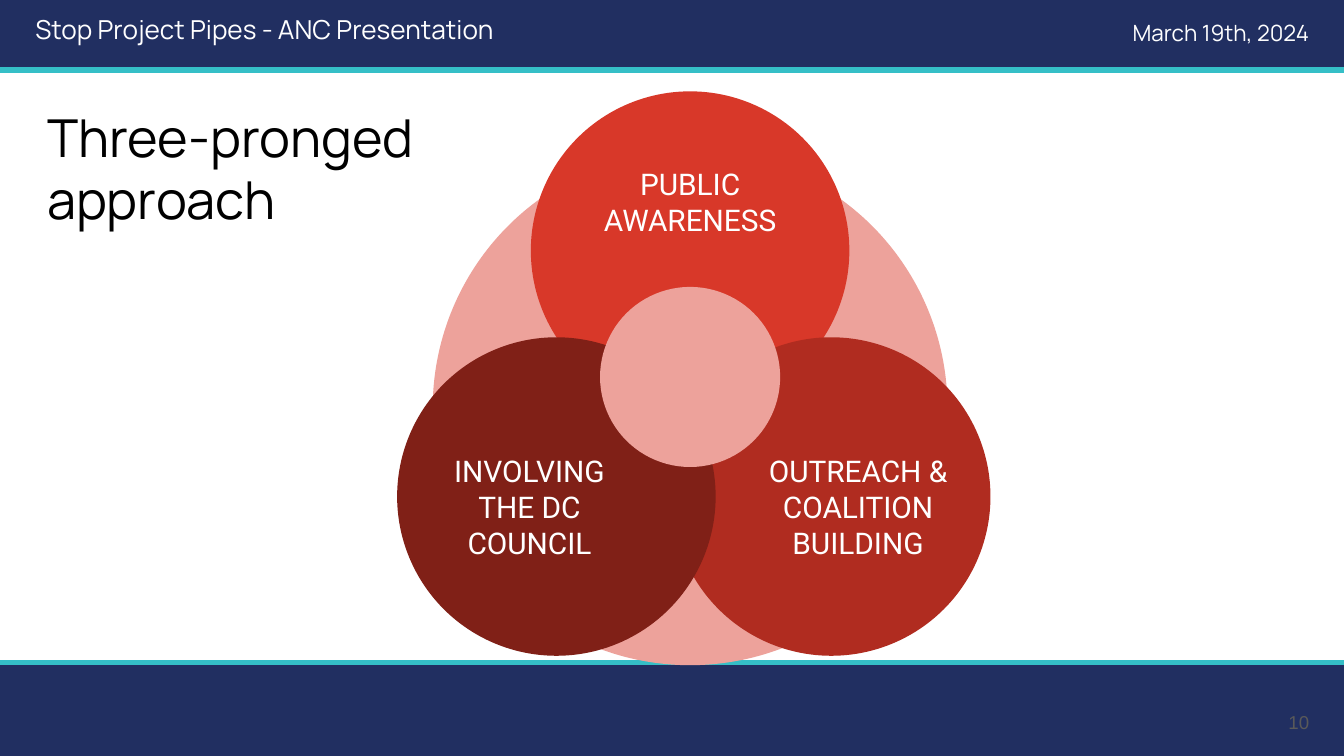
from dataclasses import dataclass

from lxml import etree
from pptx import Presentation
from pptx.dml.color import RGBColor
from pptx.enum.shapes import MSO_CONNECTOR, MSO_SHAPE
from pptx.enum.text import MSO_ANCHOR, MSO_AUTO_SIZE, PP_ALIGN
from pptx.oxml.ns import qn
from pptx.util import Pt

LEFT, CENTER, RIGHT = PP_ALIGN.LEFT, PP_ALIGN.CENTER, PP_ALIGN.RIGHT
TOP, MIDDLE = MSO_ANCHOR.TOP, MSO_ANCHOR.MIDDLE
NO_AUTOFIT = MSO_AUTO_SIZE.NONE
STRAIGHT = MSO_CONNECTOR.STRAIGHT
OVAL, RECTANGLE = MSO_SHAPE.OVAL, MSO_SHAPE.RECTANGLE
EMU_PER_PX = 4572
TITLE_ONLY = 5


@dataclass(frozen=True)
class Theme:
    navy: str = "212F61"
    teal: str = "35BFC7"
    gray: str = "595959"
    white: str = "FFFFFF"
    black: str = "000000"
    pink: str = "EDA29B"
    red: str = "D83829"
    brick: str = "B02C20"
    maroon: str = "802017"
    heading_font: str = "Manrope"
    label_font: str = "Roboto"
    number_font: str = "Arial"
    title_size: int = 28
    label_size: int = 16
    header_size: int = 14
    date_size: int = 12
    number_size: int = 10


THEME = Theme()


def px(*lengths):
    return [length * EMU_PER_PX for length in lengths]


def color(value):
    return RGBColor.from_string(value)


def write_text(shape, text, font, size, ink, align=LEFT, anchor=TOP):
    frame = shape.text_frame
    frame.word_wrap = True
    frame.auto_size = NO_AUTOFIT
    frame.vertical_anchor = anchor
    frame.margin_left, frame.margin_top, frame.margin_right, frame.margin_bottom = px(20, 20, 20, 20)
    frame.text = text
    paragraph = frame.paragraphs[0]
    paragraph.alignment = align
    paragraph.line_spacing = 1.0
    paragraph.font.name = font
    paragraph.font.size = Pt(size)
    paragraph.font.color.rgb = color(ink)


def add_text(slide, box, *style):
    write_text(slide.shapes.add_textbox(*px(*box)), *style)


def add_filled(slide, kind, box, fill, outline=None):
    shape = slide.shapes.add_shape(kind, *px(*box))
    shape.shadow.inherit = False
    shape.fill.solid()
    shape.fill.fore_color.rgb = color(fill)
    if outline:
        shape.line.color.rgb = color(outline)
        shape.line.width = Pt(0.75)
    else:
        shape.line.fill.background()


def add_circle(slide, left, top, diameter, fill):
    add_filled(slide, OVAL, (left, top, diameter, diameter), fill)


def add_band(slide, box, rule_y):
    left, _, width, _ = box
    add_filled(slide, RECTANGLE, box, THEME.navy, THEME.gray)
    rule = slide.shapes.add_connector(STRAIGHT, *px(left, rule_y, left + width, rule_y))
    rule.line.color.rgb = color(THEME.teal)
    rule.line.width = Pt(3)
    etree.SubElement(rule._element.spPr, qn("a:effectLst"))


def add_header(slide, box):
    left, top, width, _ = box
    add_band(slide, box, 104)
    add_text(slide, (left + width - 470, top + 14, 436, 80), "March 19th, 2024",
             THEME.heading_font, THEME.date_size, THEME.white, RIGHT)
    add_text(slide, (left + 35, top + 6, 906, 88), "Stop Project Pipes - ANC Presentation",
             THEME.heading_font, THEME.header_size, THEME.white)


def add_footer(slide, box):
    left, top, width, _ = box
    add_band(slide, box, top)
    add_text(slide, (left + width - 160, top + 46, 126, 86), "10",
             THEME.number_font, THEME.number_size, THEME.gray, RIGHT, MIDDLE)


def add_title(slide, box):
    title = slide.shapes.title
    title.left, title.top, title.width, title.height = px(*box)
    write_text(title, "Three-pronged approach", THEME.heading_font,
               THEME.title_size, THEME.black)


def add_prongs(slide, box):
    left, top, _, _ = box
    add_circle(slide, left + 53, top + 88, 766, THEME.pink)
    prongs = [
        (199, 0, 73, 87, THEME.red, "PUBLIC AWARENESS"),
        (409, 366, 113, 175, THEME.brick, "OUTREACH & COALITION BUILDING"),
        (0, 366, 33, 175, THEME.maroon, "INVOLVING THE DC COUNCIL"),
    ]
    for x, y, label_x, label_y, fill, label in prongs:
        add_circle(slide, left + x, top + y, 474, fill)
        add_text(slide, (left + x + label_x, top + y + label_y, 328, 154), label,
                 THEME.label_font, THEME.label_size, THEME.white, CENTER, MIDDLE)
    add_circle(slide, left + 302, top + 291, 268, THEME.pink)


def main():
    presentation = Presentation()
    presentation.slide_width, presentation.slide_height = px(2000, 1125)
    slide = presentation.slides.add_slide(presentation.slide_layouts[TITLE_ONLY])
    add_footer(slide, (-2, 986, 2004, 140))
    add_header(slide, (-2, -6, 2004, 108))
    add_title(slide, (50, 136, 648, 278))
    add_prongs(slide, (591, 136, 883, 854))
    presentation.save("out.pptx")


if __name__ == "__main__":
    main()
